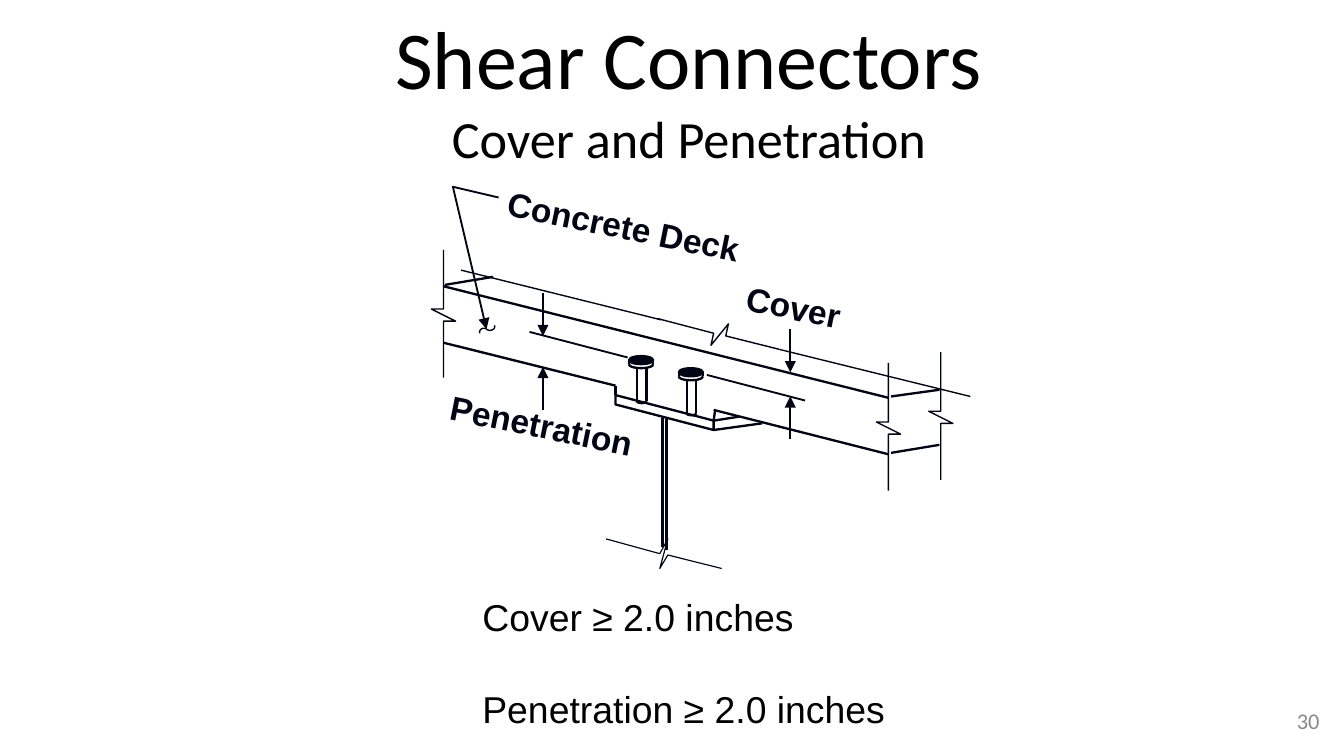
from lxml import etree
from pptx import Presentation
from pptx.dml.color import RGBColor
from pptx.enum import shapes, text
from pptx.oxml import ns
from pptx.util import Pt

THEME = dict(
    ink="000514", black="000000", gray="898989",
    head="Calibri", body="Arial",
    title=44, subtitle=28, note=20, label=18, number=12,
    bold=1.25, medium=1, thin=0.75, fine=0.63,
)
UNIT = 0.72  # points per drawing unit

# Content
TITLE = [("Shear Connectors", "title"), ("Cover and Penetration", "subtitle")]
NOTES = ["Cover ≥ 2.0 inches", "Penetration ≥ 2.0 inches"]
NUMBER = "30"

# Labels: text, left, top, width, in drawing units
LABELS = [("Cover", 508, 213, 165), ("Concrete Deck", 364, 153, 200),
          ("Penetration", 303, 301, 200)]
LABEL_HEIGHT, LABEL_ANGLE = 30, 11.4

# Straight lines by weight: x1, y1, x2, y2
LINES = {
    "bold": [
        (531, 313, 550, 310), (531, 320, 567, 315),                       # flange end
        (531, 313, 532, 306), (458, 294, 458, 287),                       # haunch
        (661, 338, 531, 305), (458, 287, 330, 255), (661, 296, 330, 213),  # deck
        (663, 337, 699, 331), (663, 295, 699, 290), (331, 212, 367, 206),  # deck ends
        (496, 409, 496, 312), (493, 407, 493, 311),                       # web
    ],
    "medium": [(526, 279, 599, 298), (394, 247, 467, 266)],  # extension lines
    "thin": [(492, 238, 343, 201), (722, 295, 580, 260)],    # far deck edge
}
DIMENSIONS = [(588, 245, 588, 277), (588, 327, 588, 295),
              (404, 218, 404, 250), (404, 305, 404, 273)]
LEADER = [(371, 147), (337, 139), (362, 245)]
FLANGE = [(458, 301), (458, 294), (531, 313), (531, 320), (458, 301)]

# Break marks
BREAK = [(0, 0), (0, 44), (-9, 44), (9, 53), (0, 53), (0, 95)]
BREAK_TOPS = [(661, 270), (330, 186), (700, 262)]
EDGE_BREAK = [(489, 237), (531, 248), (529, 257), (542, 241), (540, 250), (580, 260)]
WEB_BREAK = [(451, 401), (491, 412), (497, 401), (491, 423), (497, 413), (537, 423)]
SQUIGGLE = [[(357, 248), (356, 245), (360, 243), (362, 245)],
            [(362, 245), (365, 247), (369, 245), (368, 242)]]

# Studs: left and top of each head
STUDS = [(468, 265), (505, 274)]
HEAD_W, HEAD_H, RIM = 18, 6, 3
SHAFT_LEFT, SHAFT_W, SHAFT_TOP, SHAFT_END = 6, 7, 9, 33.5


def rgb(name):
    return RGBColor.from_string(THEME[name])


def units(*values):
    return [Pt(v * UNIT) for v in values]


def style_line(sp, weight, arrow=False):
    sp.line.color.rgb = rgb("ink")
    sp.line.width = Pt(THEME[weight])
    if arrow:
        etree.SubElement(sp.line._get_or_add_ln(), ns.qn("a:tailEnd"),
                         type="triangle", w="med", len="med")


def line(g, ends, weight, arrow=False):
    c = g.shapes.add_connector(shapes.MSO_CONNECTOR.STRAIGHT, *units(*ends))
    style_line(c, weight, arrow)
    etree.SubElement(c._element.spPr, ns.qn("a:effectLst"))


def polyline(g, points, weight, arrow=False):
    pts = [units(*p) for p in points]
    fb = g.shapes.build_freeform(*pts[0], scale=1.0)
    fb.add_line_segments(pts[1:], close=points[0] == points[-1])
    sp = fb.convert_to_shape()
    sp.fill.background()
    sp.shadow.inherit = False
    style_line(sp, weight, arrow)


def curve(g, controls, weight, steps=10):
    def at(t):
        k = ((1 - t) ** 3, 3 * t * (1 - t) ** 2, 3 * t * t * (1 - t), t ** 3)
        return tuple(sum(w * p[i] for w, p in zip(k, controls)) for i in (0, 1))
    polyline(g, [at(n / steps) for n in range(steps + 1)], weight)


def bowl(g, x, y, width, depth):
    """Lower half of an ellipse, hung from (x, y)."""
    drop = y + depth * 4 / 3
    curve(g, [(x, y), (x, drop), (x + width, drop), (x + width, y)], "bold")


def stud(g, x, y):
    head = g.shapes.add_shape(shapes.MSO_SHAPE.OVAL, *units(x, y, HEAD_W, HEAD_H))
    head.fill.solid()
    head.fill.fore_color.rgb = rgb("ink")
    head.shadow.inherit = False
    style_line(head, "bold")
    mid = y + HEAD_H / 2
    bowl(g, x, mid + RIM, HEAD_W, RIM)
    left = x + SHAFT_LEFT
    bowl(g, left, y + SHAFT_END, SHAFT_W, 1.5)
    for side in (x, x + HEAD_W):
        line(g, (side, mid, side, mid + RIM), "bold")
    for side in (left, left + SHAFT_W):
        line(g, (side, y + SHAFT_TOP, side, y + SHAFT_END), "bold")


def format_font(font, face, size, color, bold=False):
    values = dict(name=THEME[face], size=Pt(THEME[size]), bold=bold)
    for key, value in values.items():
        setattr(font, key, value)
    font.color.rgb = rgb(color)


def format_frame(tf, **values):
    values = dict(word_wrap=True, auto_size=text.MSO_AUTO_SIZE.NONE) | values
    for key, value in values.items():
        setattr(tf, key, value)


def main():
    prs = Presentation()
    prs.slide_width, prs.slide_height = Pt(720), Pt(405)
    s = prs.slides.add_slide(prs.slide_layouts[5])

    # Title
    sp = s.shapes.title
    for key, value in dict(left=45, top=0, width=648, height=67.5).items():
        setattr(sp, key, Pt(value))
    format_frame(sp.text_frame, vertical_anchor=text.MSO_ANCHOR.TOP, margin_top=Pt(4))
    p = sp.text_frame.paragraphs[0]
    p.alignment = text.PP_ALIGN.CENTER
    for i, (words, size) in enumerate(TITLE):
        if i:
            p.add_line_break()
        r = p.add_run()
        r.text = words
        format_font(r.font, "head", size, "black")

    # Slide number
    tf = s.shapes.add_textbox(Pt(546), Pt(375), Pt(168), Pt(21.6)).text_frame
    format_frame(tf, vertical_anchor=text.MSO_ANCHOR.MIDDLE)
    p = tf.paragraphs[0]
    p.text, p.alignment = NUMBER, text.PP_ALIGN.RIGHT
    format_font(p.font, "head", "number", "gray")

    # Limits
    tf = s.shapes.add_textbox(Pt(251.3), Pt(315), Pt(278), Pt(80)).text_frame
    format_frame(tf)
    for i, words in enumerate(NOTES):
        p = tf.add_paragraph() if i else tf.paragraphs[0]
        p.text = words
        p.space_before = Pt(25 if i else 0)
        format_font(p.font, "body", "note", "black")

    # Deck and beam drawing
    g = s.shapes.add_group_shape()
    for x, y in STUDS:
        stud(g, x, y)
    for weight, rows in LINES.items():
        for ends in rows:
            line(g, ends, weight)
    polyline(g, FLANGE, "bold")
    for x, y in BREAK_TOPS:
        polyline(g, [(x + dx, y + dy) for dx, dy in BREAK], "thin")
    polyline(g, EDGE_BREAK, "thin")
    polyline(g, WEB_BREAK, "fine")
    for controls in SQUIGGLE:
        curve(g, controls, "thin")

    # Dimension arrows and leader
    for ends in DIMENSIONS:
        line(g, ends, "medium", arrow=True)
    polyline(g, LEADER, "medium", arrow=True)

    # Labels along the slope
    for words, x, y, width in LABELS:
        sp = g.shapes.add_textbox(*units(x, y, width, LABEL_HEIGHT))
        sp.rotation = LABEL_ANGLE
        format_frame(sp.text_frame, margin_left=0, margin_right=0,
                     margin_top=0, margin_bottom=0)
        p = sp.text_frame.paragraphs[0]
        p.text, p.alignment = words, text.PP_ALIGN.CENTER
        format_font(p.font, "body", "label", "ink", bold=True)

    prs.save("out.pptx")


if __name__ == "__main__":
    main()
